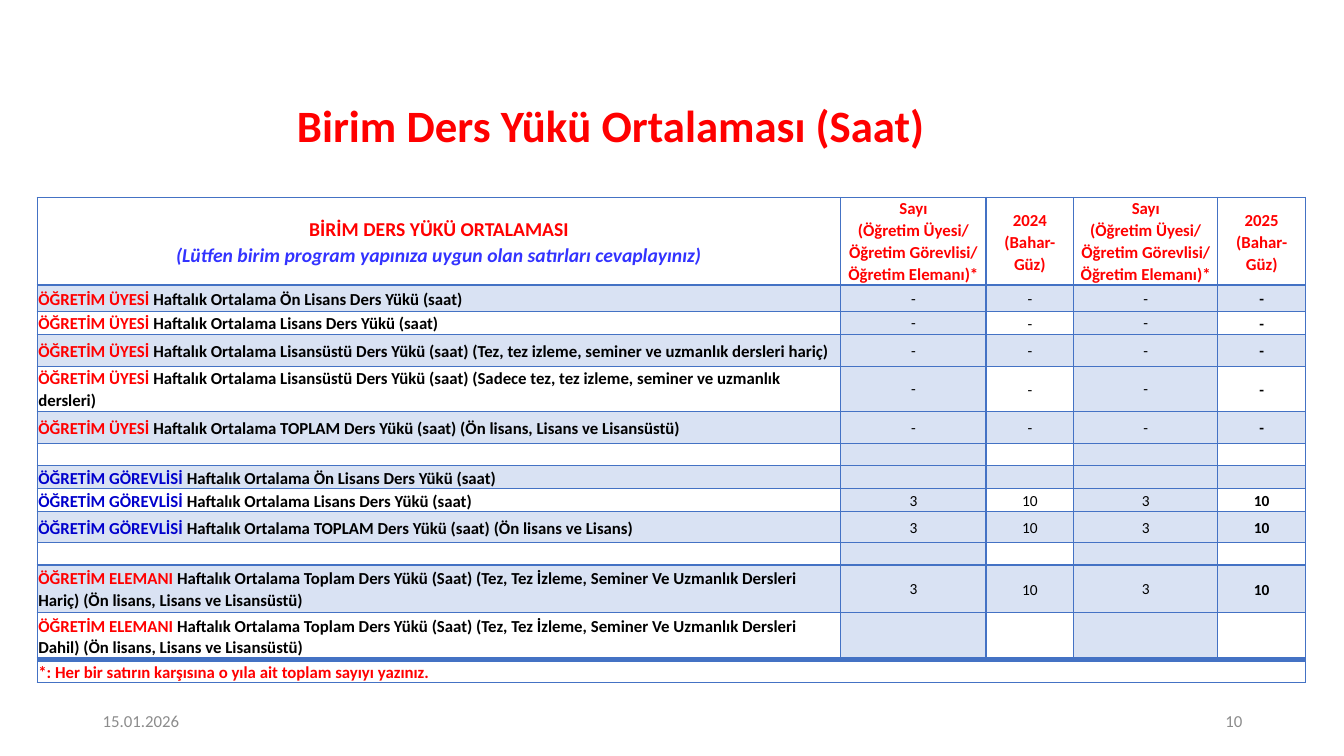
"""Builds the slide on average teaching load per unit, in hours."""
from lxml import etree
from pptx import Presentation
from pptx.dml.color import RGBColor
from pptx.enum.text import MSO_ANCHOR, MSO_AUTO_SIZE, PP_ALIGN
from pptx.oxml.ns import qn
from pptx.util import Inches, Pt

LEFT, CENTER, RIGHT = PP_ALIGN.LEFT, PP_ALIGN.CENTER, PP_ALIGN.RIGHT
MIDDLE = MSO_ANCHOR.MIDDLE
NO_AUTOFIT = MSO_AUTO_SIZE.NONE
RED, BLUE, VIOLET, BLACK, GREY = "FF0000", "0000CC", "3333FF", "000000", "8C8C8C"
ACCENT = "4472C4"

TITLE = "Birim Ders Yükü Ortalaması (Saat)"
DATE, PAGE = "15.01.2026", "10"
HEADING = "BİRİM DERS YÜKÜ ORTALAMASI"
HINT = "(Lütfen birim program yapınıza uygun olan satırları cevaplayınız)"
COUNT = ["Sayı", "(Öğretim Üyesi/ Öğretim Görevlisi/ Öğretim Elemanı)*"]
YEARS = ["2024 (Bahar- Güz)", "2025 (Bahar- Güz)"]
FOOTNOTE = "*: Her bir satırın karşısına o yıla ait toplam sayıyı yazınız."

MEMBER = ("ÖĞRETİM ÜYESİ ", RED)
LECTURER = ("ÖĞRETİM GÖREVLİSİ ", BLUE)
STAFF = ("ÖĞRETİM ELEMANI ", RED)
DASHES, LOADS, NONE = ["-"] * 4, ["3", "10"] * 2, [""] * 4
GAP = (0.22, None, "", NONE)
LOAD_ROWS = [
    (0.26, MEMBER, "Haftalık Ortalama Ön Lisans Ders Yükü (saat)", DASHES),
    (0.22, MEMBER, "Haftalık Ortalama Lisans Ders Yükü (saat)", DASHES),
    (0.32, MEMBER, "Haftalık Ortalama Lisansüstü Ders Yükü (saat) "
     "(Tez, tez izleme, seminer ve uzmanlık dersleri hariç)", DASHES),
    (0.44, MEMBER, "Haftalık Ortalama Lisansüstü Ders Yükü (saat) "
     "(Sadece tez, tez izleme, seminer ve uzmanlık dersleri)", DASHES),
    (0.32, MEMBER, "Haftalık Ortalama TOPLAM Ders Yükü (saat) "
     "(Ön lisans, Lisans ve Lisansüstü)", DASHES),
    GAP,
    (0.22, LECTURER, "Haftalık Ortalama Ön Lisans Ders Yükü (saat)", NONE),
    (0.22, LECTURER, "Haftalık Ortalama Lisans Ders Yükü (saat)", LOADS),
    (0.31, LECTURER, "Haftalık Ortalama TOPLAM Ders Yükü (saat) "
     "(Ön lisans ve Lisans)", LOADS),
    GAP,
    (0.47, STAFF, "Haftalık Ortalama Toplam Ders Yükü (Saat) "
     "(Tez, Tez İzleme, Seminer Ve Uzmanlık Dersleri Hariç) "
     "(Ön lisans, Lisans ve Lisansüstü)", LOADS),
    (0.47, STAFF, "Haftalık Ortalama Toplam Ders Yükü (Saat) "
     "(Tez, Tez İzleme, Seminer Ve Uzmanlık Dersleri Dahil) "
     "(Ön lisans, Lisans ve Lisansüstü)", NONE),
]
COLUMN_WIDTHS = [7.97, 1.44, 0.87, 1.43, 0.87]
ROW_HEIGHTS = [0.87] + [row[0] for row in LOAD_ROWS] + [0.22]
FOOT = len(ROW_HEIGHTS) - 1
RULE_WIDTHS = {1: 2, FOOT: 4}


def rgb(color):
    return RGBColor.from_string(color)


def write(frame, paragraphs, size=12, color=BLACK, bold=False, italic=False,
          align=LEFT, spacing=1.07):
    """Fill a frame; each paragraph is a list of (text, format changes)."""
    for index, runs in enumerate(paragraphs):
        paragraph = frame.paragraphs[0] if index == 0 else frame.add_paragraph()
        paragraph.alignment, paragraph.line_spacing = align, spacing
        for text, changes in runs:
            run = paragraph.add_run()
            run.text = text
            font = run.font
            font.name, font.size = "Calibri", Pt(size)
            font.bold = changes.get("bold", bold)
            font.italic = changes.get("italic", italic)
            font.color.rgb = rgb(changes.get("color", color))
        if not runs:
            etree.SubElement(paragraph._p, qn("a:endParaRPr"), sz=str(size * 100))


def add_color(parent, color, alpha=100):
    solid = etree.SubElement(parent, qn("a:solidFill"))
    tone = etree.SubElement(solid, qn("a:srgbClr"), val=color)
    if alpha < 100:
        etree.SubElement(tone, qn("a:alpha"), val=str(alpha * 1000))


def style_cell(cell, row, column):
    """Set margins, rules and the band tint from the grid position."""
    edge = Inches(0 if column in (1, 3) else 0.01)
    cell.margin_left = cell.margin_right = cell.margin_top = edge
    cell.margin_bottom = 0
    cell.vertical_anchor = MIDDLE
    properties = cell._tc.get_or_add_tcPr()
    widths = {"L": 1, "R": 1, "T": RULE_WIDTHS.get(row, 1),
              "B": RULE_WIDTHS.get(row + 1, 1)}
    for side, width in widths.items():
        rule = etree.SubElement(properties, qn(f"a:ln{side}"), w=str(Pt(width)))
        add_color(rule, ACCENT)
    banded = row % 2 == 1 or column in (1, 3)
    if 0 < row < FOOT and banded:
        add_color(properties, ACCENT, 20)
    else:
        cell.fill.background()


def add_footer(slide, text, left, align):
    box = slide.shapes.add_textbox(Inches(left), Inches(6.95), Inches(3), Inches(0.4))
    box.text_frame.word_wrap = True
    box.text_frame.vertical_anchor = MIDDLE
    write(box.text_frame, [[(text, {})]], color=GREY, align=align, spacing=1.0)


def add_load_table(slide):
    frame = slide.shapes.add_table(
        len(ROW_HEIGHTS), len(COLUMN_WIDTHS), Inches(0.37), Inches(1.96),
        Inches(sum(COLUMN_WIDTHS)), Inches(sum(ROW_HEIGHTS)))
    table = frame.table
    table.first_row = table.horz_banding = False
    for column, width in zip(table.columns, COLUMN_WIDTHS):
        column.width = Inches(width)
    for row, height in enumerate(ROW_HEIGHTS):
        table.rows[row].height = Inches(height)
        for column in range(len(COLUMN_WIDTHS)):
            style_cell(table.cell(row, column), row, column)
    table.cell(FOOT, 0).merge(table.cell(FOOT, len(COLUMN_WIDTHS) - 1))

    write(table.cell(0, 0).text_frame,
          [[(HEADING, {})], [(HINT, {"color": VIOLET, "italic": True})]],
          size=14, color=RED, bold=True, align=CENTER)
    headers = [COUNT, YEARS[:1], COUNT, YEARS[1:]]
    for column, lines in enumerate(headers, 1):
        write(table.cell(0, column).text_frame, [[(line, {})] for line in lines],
              color=RED, bold=True, align=CENTER)
    for row, (_, group, label, values) in enumerate(LOAD_ROWS, 1):
        runs = [(group[0], {"color": group[1]}), (label, {})] if group else []
        write(table.cell(row, 0).text_frame, [runs], bold=True)
        for column, value in enumerate(values, 1):
            write(table.cell(row, column).text_frame, [[(value, {})] if value else []],
                  size=11, bold=column == 4, align=CENTER)
    write(table.cell(FOOT, 0).text_frame, [[(FOOTNOTE, {})]], color=RED, bold=True)


def main():
    deck = Presentation()
    deck.slide_width, deck.slide_height = Inches(13.33), Inches(7.5)
    slide = deck.slides.add_slide(deck.slide_layouts[5])
    title = slide.shapes.title
    title.left, title.top = Inches(0.32), Inches(0.92)
    title.width, title.height = Inches(11.48), Inches(0.69)
    title.text_frame.auto_size = NO_AUTOFIT
    title.text_frame.vertical_anchor = MIDDLE
    write(title.text_frame, [[(TITLE, {})]], size=32, color=RED, bold=True,
          align=CENTER, spacing=0.9)
    add_load_table(slide)
    add_footer(slide, DATE, 0.92, LEFT)
    add_footer(slide, PAGE, 9.42, RIGHT)
    deck.save("out.pptx")


if __name__ == "__main__":
    main()
